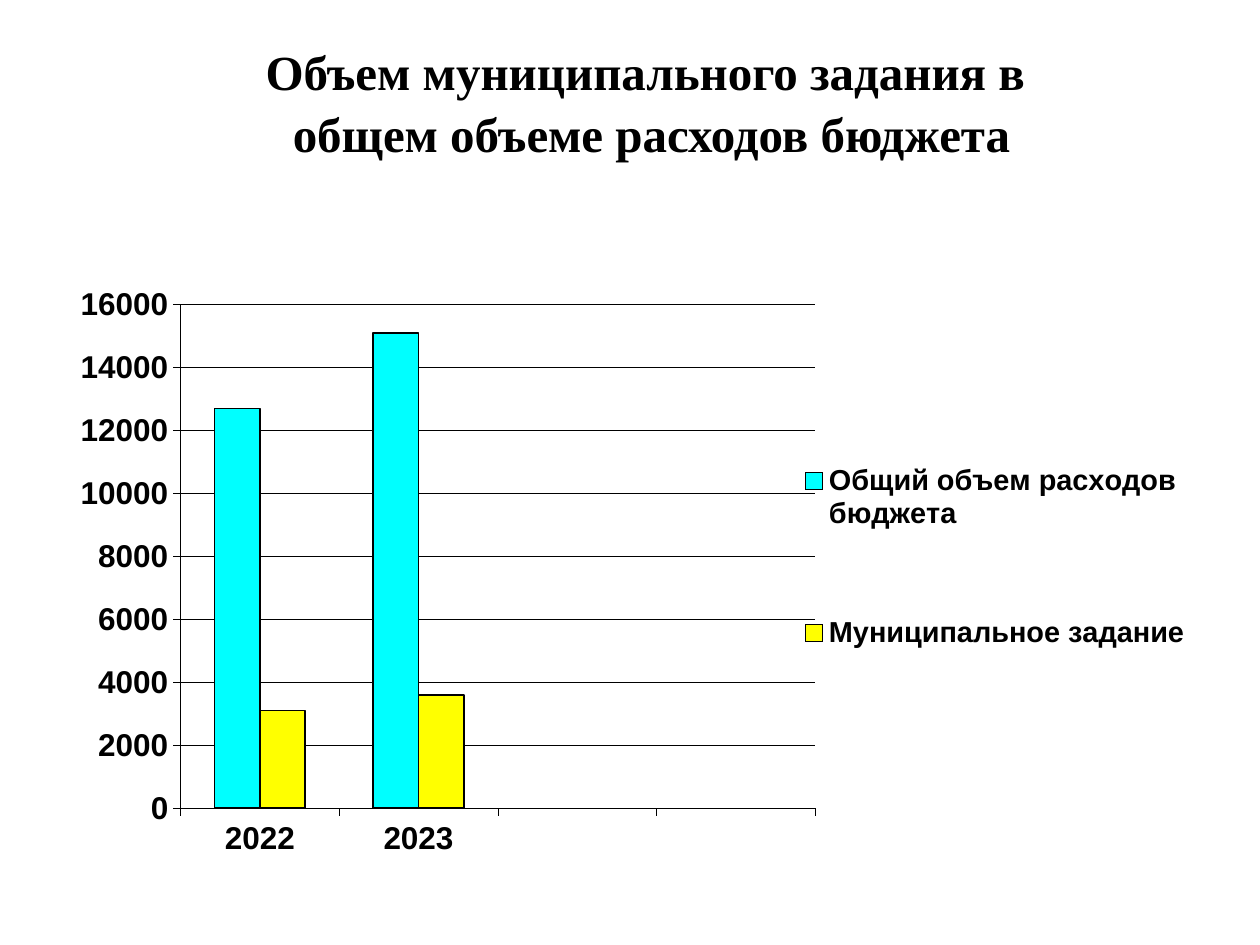
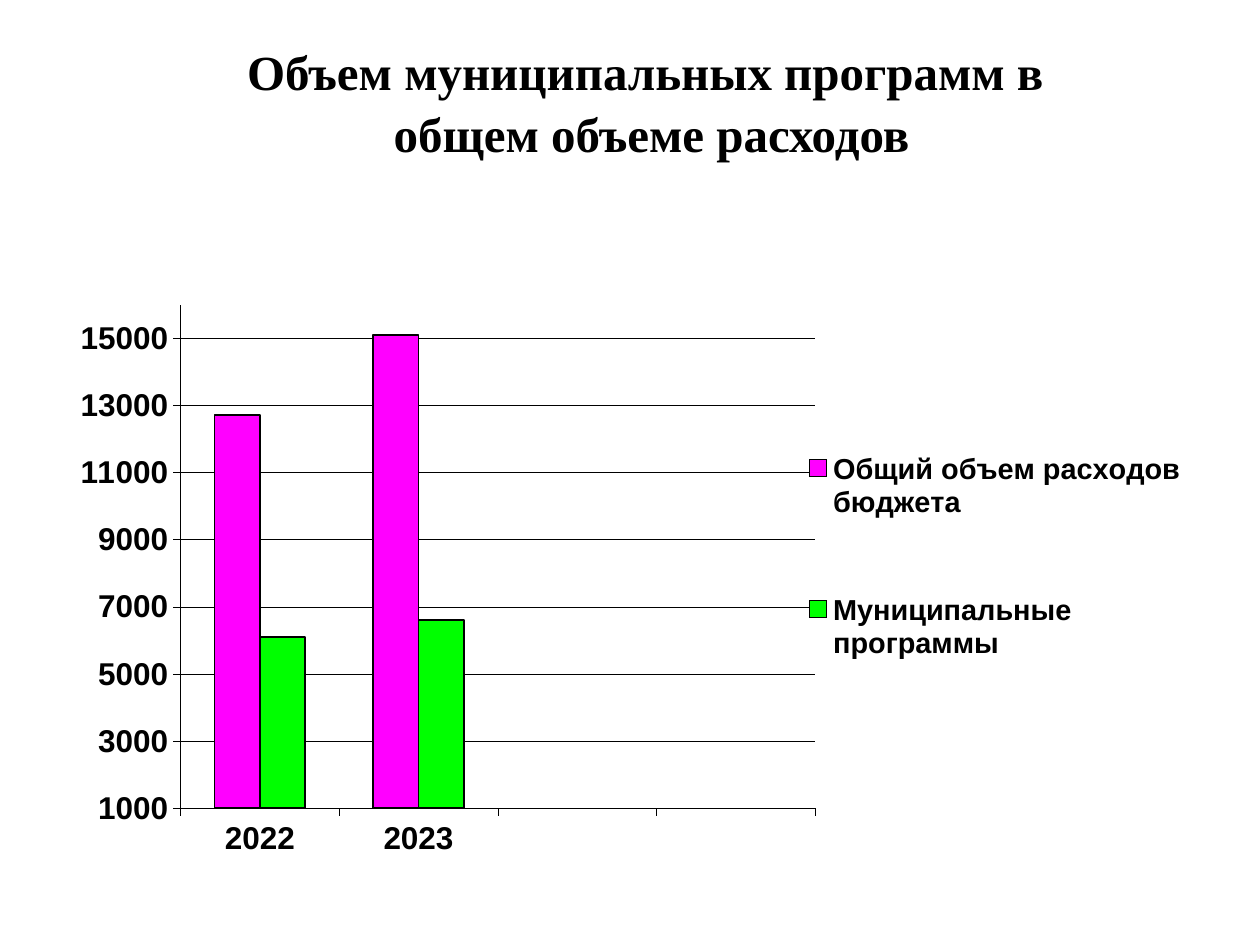
from lxml.etree import SubElement
from pptx import Presentation
from pptx.chart.data import CategoryChartData
from pptx.dml.color import RGBColor
from pptx.enum.chart import XL_CHART_TYPE as ChartType
from pptx.enum.chart import XL_LEGEND_POSITION as LegendPosition
from pptx.enum.chart import XL_TICK_LABEL_POSITION as LabelPosition
from pptx.enum.chart import XL_TICK_MARK as TickMark
from pptx.enum.text import MSO_ANCHOR, MSO_AUTO_SIZE, PP_ALIGN
from pptx.oxml.ns import qn
from pptx.util import Inches, Pt

SLIDE_SIZE = (10, 7.5)
TITLE_BOX = (0.67, 0.25, 9, 1.25)
CHART_BOX = (0.64, 2.19, 8.87, 4.84)
PLOT_SHARES = (0.089, 0.047, 0.568, 0.826)
LEGEND_SHARES = (0.642, 0.167, 0.352, 0.587)
BLACK = "000000"
TITLE_FONT = {"name": "Times New Roman", "size": Pt(28), "bold": True}
AXIS_FONT = {"name": "Arial", "size": Pt(18), "bold": True}
LEGEND_FONT = AXIS_FONT | {"size": Pt(16.5)}
YEARS = ("2022", "2023", "", "")
TOTAL_NAME = "Общий объем расходов бюджета"
TOTAL_VALUES = (12700, 15100, None, None)

SLIDES = (
    {
        "title": "Объем муниципального задания в \nобщем объеме расходов бюджета",
        "series": (
            (TOTAL_NAME, TOTAL_VALUES, "00FFFF"),
            ("Муниципальное задание", (3100, 3600, None, None), "FFFF00"),
        ),
        "minimum": 0,
    },
    {
        "title": "Объем муниципальных программ в \nобщем объеме расходов",
        "series": (
            (TOTAL_NAME, TOTAL_VALUES, "FF00FF"),
            ("Муниципальные программы", (6100, 6600, None, None), "00FF00"),
        ),
        "minimum": 1000,
    },
)


def color(hex_string):
    """Return the colour for a hex string."""
    return RGBColor.from_string(hex_string)


def set_values(target, values):
    """Set every attribute named in a dict."""
    for name, value in values.items():
        setattr(target, name, value)


def style_font(font, values):
    """Apply font values in black."""
    set_values(font, values)
    font.color.rgb = color(BLACK)


def style_line(line, width):
    """Give a line the shared colour and a width in points."""
    line.color.rgb = color(BLACK)
    line.width = Pt(width)


def set_layout(element, index, shares, inner=False):
    """Place a chart part by shares of the chart's size."""
    for old_layout in element.findall(qn("c:layout")):
        element.remove(old_layout)
    layout = element.makeelement(qn("c:layout"))
    element.insert(index, layout)
    manual = SubElement(layout, qn("c:manualLayout"))
    settings = [("layoutTarget", "inner")] if inner else []
    settings += [("xMode", "edge"), ("yMode", "edge")]
    settings += zip("xywh", shares)
    for tag, value in settings:
        SubElement(manual, qn(f"c:{tag}")).set("val", str(value))


def add_title(slide, box, text):
    """Fill and place the title placeholder."""
    title = slide.shapes.title
    set_values(title, dict(zip(("left", "top", "width", "height"), map(Inches, box))))
    frame = title.text_frame
    frame.text = text
    set_values(frame, {
        "word_wrap": True,
        "auto_size": MSO_AUTO_SIZE.NONE,
        "vertical_anchor": MSO_ANCHOR.TOP,
        "margin_top": Inches(0.06),
    })
    for paragraph in frame.paragraphs:
        set_values(paragraph, {"alignment": PP_ALIGN.CENTER, "line_spacing": 1.05})
        style_font(paragraph.runs[0].font, TITLE_FONT)


def style_axes(chart, minimum):
    """Format both axes and the value gridlines."""
    for axis in (chart.category_axis, chart.value_axis):
        set_values(axis, {
            "major_tick_mark": TickMark.OUTSIDE,
            "minor_tick_mark": TickMark.NONE,
        })
        style_font(axis.tick_labels.font, AXIS_FONT)
        style_line(axis.format.line, 0.25)
    chart.category_axis.tick_label_position = LabelPosition.LOW
    set_values(chart.value_axis, {
        "minimum_scale": minimum,
        "maximum_scale": 16000,
        "major_unit": 2000,
        "has_major_gridlines": True,
    })
    style_line(chart.value_axis.major_gridlines.format.line, 0.25)


def add_legend(chart):
    """Put the legend to the right of the plot."""
    chart.has_legend = True
    legend = chart.legend
    set_values(legend, {"position": LegendPosition.RIGHT, "include_in_layout": False})
    style_font(legend.font, LEGEND_FONT)
    set_layout(legend._element, 1, LEGEND_SHARES)


def add_budget_chart(slide, box, series_rows, minimum):
    """Draw the clustered columns of budget volumes."""
    data = CategoryChartData()
    data.categories = YEARS
    for name, values, _ in series_rows:
        data.add_series(name, values)
    chart = slide.shapes.add_chart(
        ChartType.COLUMN_CLUSTERED, *map(Inches, box), data
    ).chart
    chart.has_title = False
    style_font(chart.font, AXIS_FONT)
    plot = chart.plots[0]
    set_values(plot, {"gap_width": 150, "overlap": 0, "vary_by_categories": False})
    for series, (_, _, fill_color) in zip(plot.series, series_rows):
        series.format.fill.solid()
        series.format.fill.fore_color.rgb = color(fill_color)
        style_line(series.format.line, 1)
    style_axes(chart, minimum)
    add_legend(chart)
    plot_area = chart._chartSpace.chart.plotArea
    set_layout(plot_area, 0, PLOT_SHARES, inner=True)


def main():
    """Build and save the presentation."""
    presentation = Presentation()
    width, height = map(Inches, SLIDE_SIZE)
    set_values(presentation, {"slide_width": width, "slide_height": height})
    for content in SLIDES:
        slide = presentation.slides.add_slide(presentation.slide_layouts[5])
        add_title(slide, TITLE_BOX, content["title"])
        add_budget_chart(slide, CHART_BOX, content["series"], content["minimum"])
    presentation.save("out.pptx")


if __name__ == "__main__":
    main()
